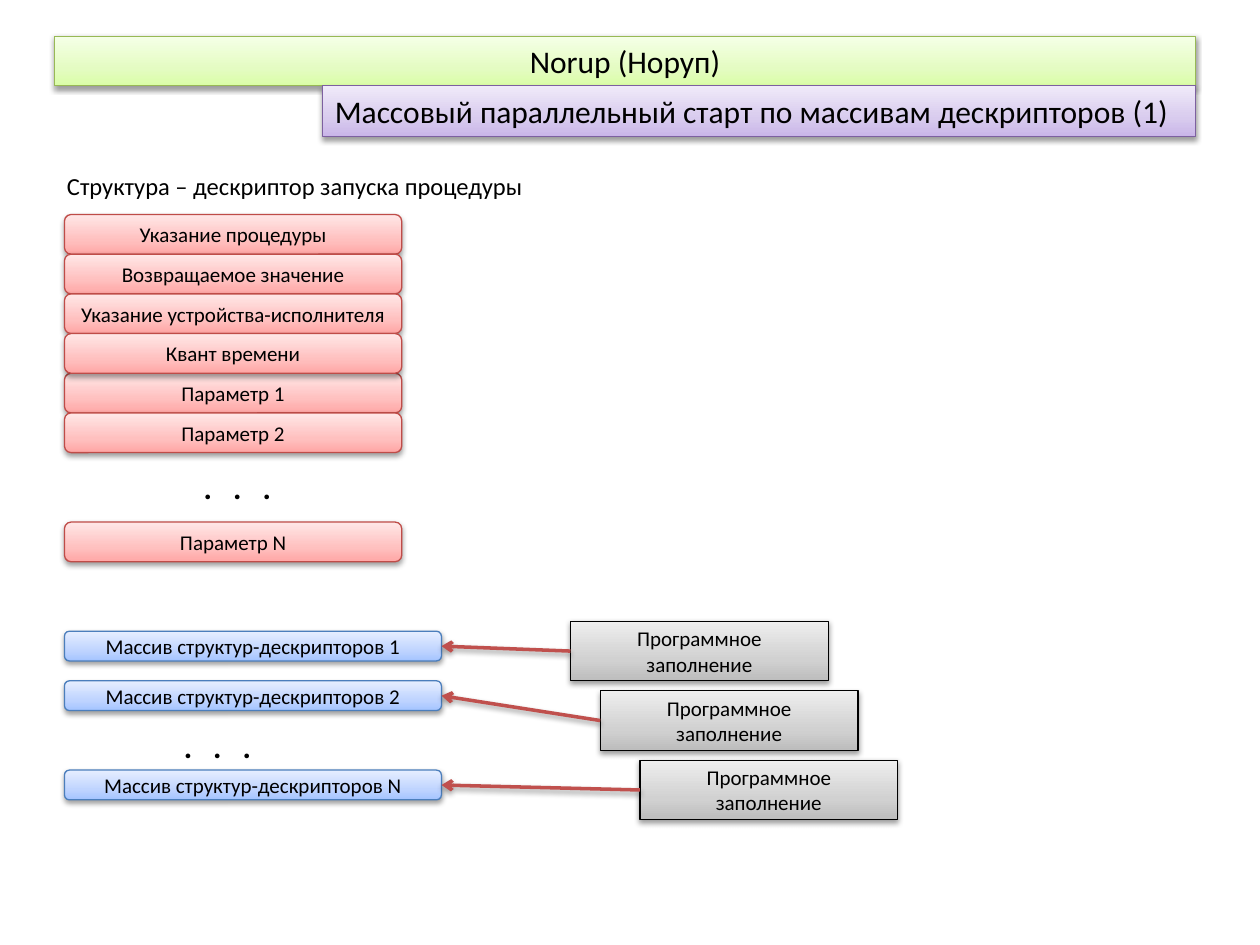
import dataclasses
import typing

import pptx
import pptx.dml.color
import pptx.enum.shapes
import pptx.enum.text
import pptx.oxml
import pptx.oxml.ns
import pptx.util

RGB = pptx.dml.color.RGBColor
KIND = pptx.enum.shapes.MSO_SHAPE
ALIGN = pptx.enum.text.PP_ALIGN
ANCHOR = pptx.enum.text.MSO_ANCHOR
FIT = pptx.enum.text.MSO_AUTO_SIZE

BLACK = RGB(0x00, 0x00, 0x00)
ARROW_RED = RGB(0xC0, 0x50, 0x4D)

# Grid of square cells, one millimetre each
COLUMNS, ROWS = 254, 190.5
SLIDE_WIDTH, SLIDE_HEIGHT = pptx.util.Inches(10), pptx.util.Inches(7.5)

SHADOW_XML = (
    '<a:outerShdw %s blurRad="40000" dist="20000" dir="5400000" rotWithShape="0">'
    '<a:srgbClr val="000000"><a:alpha val="38000"/></a:srgbClr></a:outerShdw>'
    % pptx.oxml.ns.nsdecls("a")
)


@dataclasses.dataclass(frozen=True)
class Palette:
    bottom: RGB
    middle: RGB
    top: RGB
    outline: RGB


GREEN = Palette(RGB(0xDA, 0xFD, 0xA7), RGB(0xE4, 0xFC, 0xC2), RGB(0xF5, 0xFF, 0xE7), RGB(0x98, 0xB9, 0x55))
PURPLE = Palette(RGB(0xC9, 0xB5, 0xE8), RGB(0xD8, 0xCB, 0xEE), RGB(0xF0, 0xEA, 0xF9), RGB(0x7D, 0x60, 0xA0))
BLUE = Palette(RGB(0xA4, 0xC4, 0xFF), RGB(0xBF, 0xD4, 0xFF), RGB(0xE6, 0xEE, 0xFF), RGB(0x4B, 0x7E, 0xBC))
GREY = Palette(RGB(0xBD, 0xBD, 0xBD), RGB(0xD1, 0xD1, 0xD1), RGB(0xEE, 0xEE, 0xEE), BLACK)
RED = Palette(RGB(0xFF, 0xA6, 0xA5), RGB(0xFF, 0xC0, 0xBF), RGB(0xFF, 0xE7, 0xE7), RGB(0xBF, 0x4C, 0x48))


class Cell(typing.NamedTuple):
    column: float
    row: float
    columns: float
    rows: float

    def lengths(self) -> tuple:
        return (
            int(SLIDE_WIDTH * self.column / COLUMNS),
            int(SLIDE_HEIGHT * self.row / ROWS),
            int(SLIDE_WIDTH * self.columns / COLUMNS),
            int(SLIDE_HEIGHT * self.rows / ROWS),
        )


def apply(target, values: dict) -> None:
    for name, value in values.items():
        setattr(target, name, value)


def add_shadow(properties) -> None:
    effects = properties.find(pptx.oxml.ns.qn("a:effectLst"))
    if effects is None:
        effects = pptx.oxml.parse_xml("<a:effectLst %s/>" % pptx.oxml.ns.nsdecls("a"))
        properties.append(effects)
    effects.append(pptx.oxml.parse_xml(SHADOW_XML))


def write(shape, words: str, size: float, align=ALIGN.LEFT, bold: bool = False, **frame_values):
    frame = shape.text_frame
    apply(frame, {"word_wrap": True, **frame_values})
    paragraph = frame.paragraphs[0]
    paragraph.alignment = align
    run = paragraph.add_run()
    run.text = words
    apply(run.font, {"name": "Calibri", "size": pptx.util.Pt(size), "bold": bold})
    run.font.color.rgb = BLACK
    return run


def add_box(slide, kind, cell: Cell, palette: Palette, words: str, size: float = 12,
            align=ALIGN.CENTER, **frame_values):
    box = slide.shapes.add_shape(kind, *cell.lengths())
    # Three-stop gradient rising from bottom to top
    box.fill.gradient()
    box.fill.gradient_angle = 90
    stops = "".join(
        '<a:gs pos="%d"><a:srgbClr val="%s"/></a:gs>' % stop
        for stop in ((0, palette.bottom), (35000, palette.middle), (100000, palette.top))
    )
    properties = box._element.spPr
    old_stops = properties.find(".//" + pptx.oxml.ns.qn("a:gsLst"))
    old_stops.getparent().replace(old_stops, pptx.oxml.parse_xml(
        "<a:gsLst %s>%s</a:gsLst>" % (pptx.oxml.ns.nsdecls("a"), stops)))
    box.line.color.rgb = palette.outline
    box.line.width = pptx.util.Pt(0.75)
    box.shadow.inherit = False
    add_shadow(properties)
    write(box, words, size, align, **{"vertical_anchor": ANCHOR.MIDDLE, **frame_values})
    return box


def add_label(slide, cell: Cell, words: str, size: float, **values):
    label = slide.shapes.add_textbox(*cell.lengths())
    return write(label, words, size, auto_size=FIT.SHAPE_TO_FIT_TEXT, **values)


def add_ellipsis(slide, column: float, row: float) -> None:
    dots = add_label(slide, Cell(column, row, 26, 10.2), ". . .", 18, bold=True,
                     margin_left=pptx.util.Inches(0.16))
    dots.font._element.set("spc", "400")


def add_arrow(slide, source, target) -> None:
    arrow = slide.shapes.add_connector(pptx.enum.shapes.MSO_CONNECTOR.STRAIGHT, 0, 0, 0, 0)
    arrow.begin_connect(source, 1)
    arrow.end_connect(target, 3)
    arrow.line.color.rgb = ARROW_RED
    arrow.line.width = pptx.util.Pt(2)
    arrow.line._get_or_add_ln().append(
        pptx.oxml.parse_xml('<a:tailEnd %s type="arrow"/>' % pptx.oxml.ns.nsdecls("a")))
    add_shadow(arrow._element.spPr)


# Descriptor fields with their place in the stack, back to front
FIELDS = (
    ("Указание процедуры", 0),
    ("Возвращаемое значение", 1),
    ("Параметр 1", 4),
    ("Указание устройства-исполнителя", 2),
    ("Параметр 2", 5),
    ("Параметр N", 7.75),
    ("Квант времени", 3),
)
# Array number, array row, column of the box that fills it
ARRAYS = (("1", 127.25, 115), ("2", 137.25, 121), ("N", 155.25, 129))


def main() -> None:
    deck = pptx.Presentation()
    apply(deck, {"slide_width": SLIDE_WIDTH, "slide_height": SLIDE_HEIGHT})
    slide = deck.slides.add_slide(deck.slide_layouts[6])

    # Headings
    add_box(slide, KIND.RECTANGLE, Cell(11, 7.3, 230, 10), GREEN, "Norup (Норуп)", 18)
    add_box(slide, KIND.RECTANGLE, Cell(65, 17.3, 176, 10.2), PURPLE,
            "Массовый параллельный старт по массивам дескрипторов (1)", 18, ALIGN.LEFT,
            vertical_anchor=ANCHOR.TOP, auto_size=FIT.SHAPE_TO_FIT_TEXT)

    # Descriptor arrays and the programs that fill them
    arrays = [
        add_box(slide, KIND.ROUNDED_RECTANGLE, Cell(13, row, 76, 6), BLUE,
                f"Массив структур-дескрипторов {number}")
        for number, row, _ in ARRAYS
    ]
    add_ellipsis(slide, 33, 145.3)
    fillers = [
        add_box(slide, KIND.RECTANGLE, Cell(column, 125.25 + 14 * index, 52, 12), GREY,
                "Программное заполнение")
        for index, (_, _, column) in enumerate(ARRAYS)
    ]
    for filler, array in zip(fillers, arrays):
        add_arrow(slide, filler, array)

    # Structure of one descriptor
    for words, place in FIELDS:
        add_box(slide, KIND.ROUNDED_RECTANGLE, Cell(13, 43.25 + 8 * place, 68, 8), RED, words)
    add_ellipsis(slide, 37, 93.2)
    add_label(slide, Cell(11, 33.3, 98, 8.6), "Структура – дескриптор запуска процедуры", 14)

    deck.save("out.pptx")


if __name__ == "__main__":
    main()
